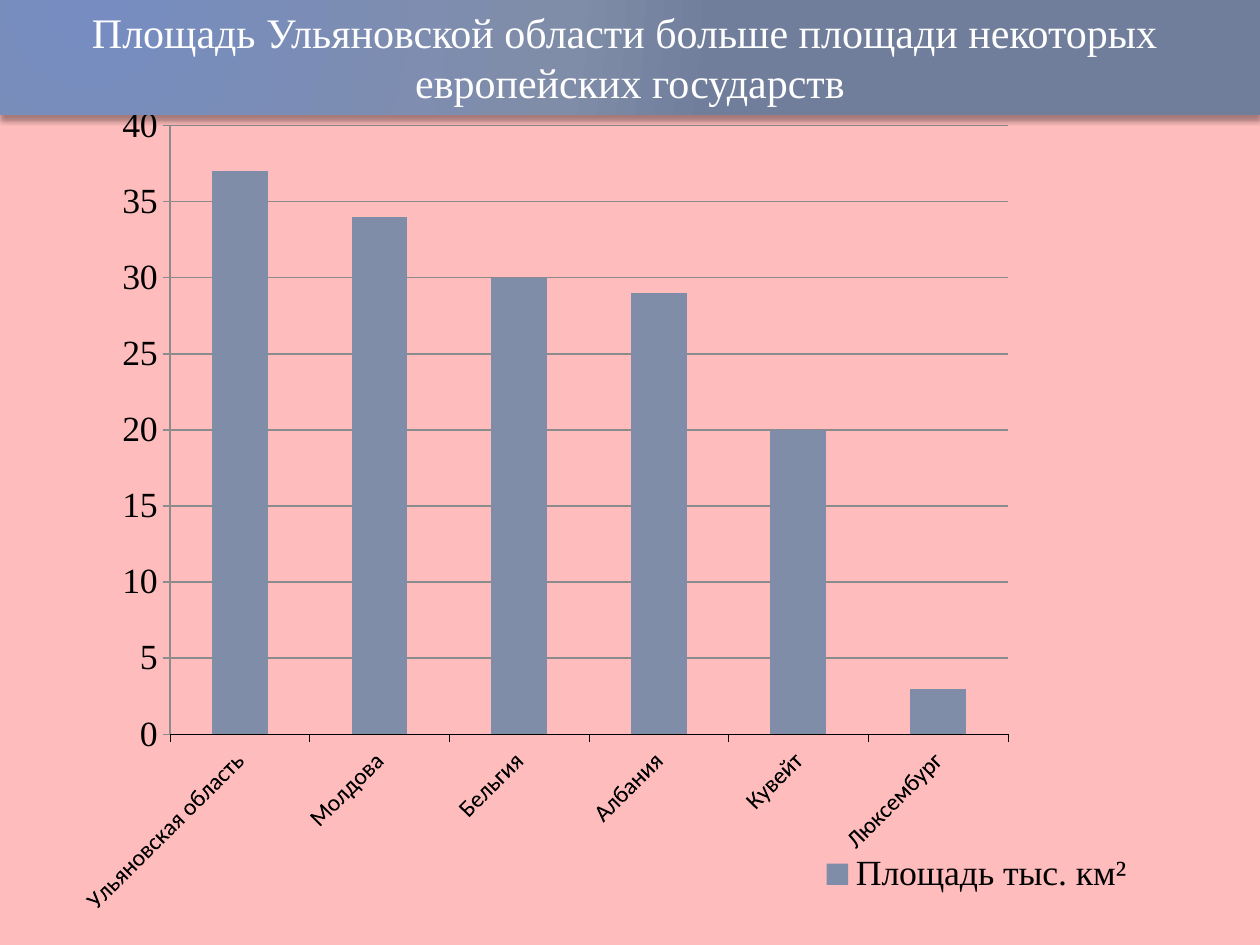
from dataclasses import dataclass

from pptx import Presentation
from pptx import util as u
from pptx.chart.data import CategoryChartData
from pptx.dml.color import RGBColor
from pptx.enum import chart as charts, shapes, text
from pptx.oxml import parse_xml
from pptx.oxml.ns import nsdecls, qn


@dataclass(frozen=True)
class Theme:
    serif: str = "Times New Roman"
    sans: str = "Calibri"
    title_size: float = 24
    chart_size: float = 20.4
    category_size: float = 13.6
    backdrop: str = "FFBCBC"
    bars: str = "808DA9"
    grid: str = "8B8B8B"
    ink: str = "000000"
    title_ink: str = "FFFFFF"
    banner_stops: tuple = ((0, "778DC1"), (76, "808DA9"), (100, "707E9B"))


THEME = Theme()
TITLE = ("Площадь Ульяновской области больше площади некоторых ",
         "европейских государств")
SERIES = "Площадь тыс. км²"
AREAS = {
    "Ульяновская область": 37,
    "Молдова": 34,
    "Бельгия": 30,
    "Албания": 29,
    "Кувейт": 20,
    "Люксембург": 3,
}


def style_font(font, face, size, color):
    font.name, font.size = face, u.Pt(size)
    font.color.rgb = RGBColor.from_string(color)


def style_line(line, color, width):
    line.color.rgb = RGBColor.from_string(color)
    line.width = u.Pt(width)


def set_layout(parent, index, x, y, w, h, inner=False):
    """Place a chart part by fractions of the chart's size."""
    for old in parent.findall(qn("c:layout")):
        parent.remove(old)
    target = '<c:layoutTarget val="inner"/>' if inner else ""
    parent.insert(index, parse_xml(
        f'<c:layout {nsdecls("c")}><c:manualLayout>{target}'
        '<c:xMode val="edge"/><c:yMode val="edge"/>'
        f'<c:x val="{x}"/><c:y val="{y}"/><c:w val="{w}"/><c:h val="{h}"/>'
        '</c:manualLayout></c:layout>'))


def fill_chart(chart, color):
    """Give the whole chart area a plain fill without an outline."""
    chart.element.find(qn("c:chart")).addnext(parse_xml(
        f'<c:spPr {nsdecls("c", "a")}><a:solidFill><a:srgbClr val="{color}"/>'
        '</a:solidFill><a:ln><a:noFill/></a:ln></c:spPr>'))


def style_axes(chart):
    countries, scale = chart.category_axis, chart.value_axis
    for axis in (countries, scale):
        axis.major_tick_mark = charts.XL_TICK_MARK.OUTSIDE
        axis.minor_tick_mark = charts.XL_TICK_MARK.NONE
    countries.has_major_gridlines = False
    style_font(countries.tick_labels.font, THEME.sans, THEME.category_size, THEME.ink)
    style_line(countries.format.line, THEME.ink, 0.28)
    countries._element.find(qn("c:txPr")).find(qn("a:bodyPr")).set("rot", "-2700000")

    scale.minimum_scale, scale.maximum_scale, scale.major_unit = 0, 40, 5
    scale.has_major_gridlines = True
    for line in (scale.major_gridlines.format.line, scale.format.line):
        style_line(line, THEME.grid, 1)


def add_area_chart(slide):
    """Add the columns that compare the areas of the region and the countries."""
    data = CategoryChartData()
    data.categories = list(AREAS)
    data.add_series(SERIES, list(AREAS.values()))
    chart = slide.shapes.add_chart(
        charts.XL_CHART_TYPE.COLUMN_CLUSTERED, u.Inches(0), u.Inches(0.84),
        u.Inches(10), u.Inches(6.66), data).chart
    chart.has_title = False
    style_font(chart.font, THEME.serif, THEME.chart_size, THEME.ink)
    fill_chart(chart, THEME.backdrop)
    style_axes(chart)

    columns = chart.plots[0]
    columns.gap_width = 150
    columns.vary_by_categories = False
    bars = columns.series[0].format.fill
    bars.solid()
    bars.fore_color.rgb = RGBColor.from_string(THEME.bars)

    chart.has_legend = True
    chart.legend.position = charts.XL_LEGEND_POSITION.RIGHT
    chart.legend.include_in_layout = False
    set_layout(chart.legend._element, 1, 0.64, 0.88, 0.27, 0.07)
    plot_area = chart.element.find(qn("c:chart")).find(qn("c:plotArea"))
    set_layout(plot_area, 0, 0.135, 0.015, 0.665, 0.732, inner=True)


def paint_banner(banner):
    """Apply the radial gradient and the soft shadow below."""
    banner.line.fill.background()
    stops = "".join(
        f'<a:gs pos="{place * 1000}"><a:srgbClr val="{color}"/></a:gs>'
        for place, color in THEME.banner_stops)
    properties = banner._element.spPr
    properties.find(qn("a:prstGeom")).addnext(parse_xml(
        f'<a:gradFill {nsdecls("a")} rotWithShape="1"><a:gsLst>{stops}</a:gsLst>'
        '<a:path path="circle"><a:fillToRect l="15000" t="15000" r="100000" '
        'b="100000"/></a:path></a:gradFill>'))
    properties.append(parse_xml(
        f'<a:effectLst {nsdecls("a")}><a:outerShdw blurRad="{u.Pt(3)}" '
        f'dist="{u.Pt(3)}" dir="5400000" rotWithShape="0"><a:srgbClr '
        f'val="{THEME.ink}"><a:alpha val="35000"/></a:srgbClr></a:outerShdw>'
        '</a:effectLst>'))


def add_banner(slide):
    banner = slide.shapes.add_shape(
        shapes.MSO_SHAPE.RECTANGLE, 0, 0, u.Inches(10), u.Inches(0.91))
    paint_banner(banner)
    frame = banner.text_frame
    frame.word_wrap = True
    frame.auto_size = text.MSO_AUTO_SIZE.SHAPE_TO_FIT_TEXT
    frame.vertical_anchor = text.MSO_ANCHOR.TOP
    for number, words in enumerate(TITLE):
        paragraph = frame.add_paragraph() if number else frame.paragraphs[0]
        paragraph.alignment = text.PP_ALIGN.CENTER
        run = paragraph.add_run()
        run.text = words
        style_font(run.font, THEME.serif, THEME.title_size, THEME.title_ink)


def main():
    deck = Presentation()
    deck.slide_width, deck.slide_height = u.Inches(10), u.Inches(7.5)
    slide = deck.slides.add_slide(deck.slide_layouts[6])
    add_area_chart(slide)
    add_banner(slide)
    deck.save("out.pptx")


if __name__ == "__main__":
    main()
